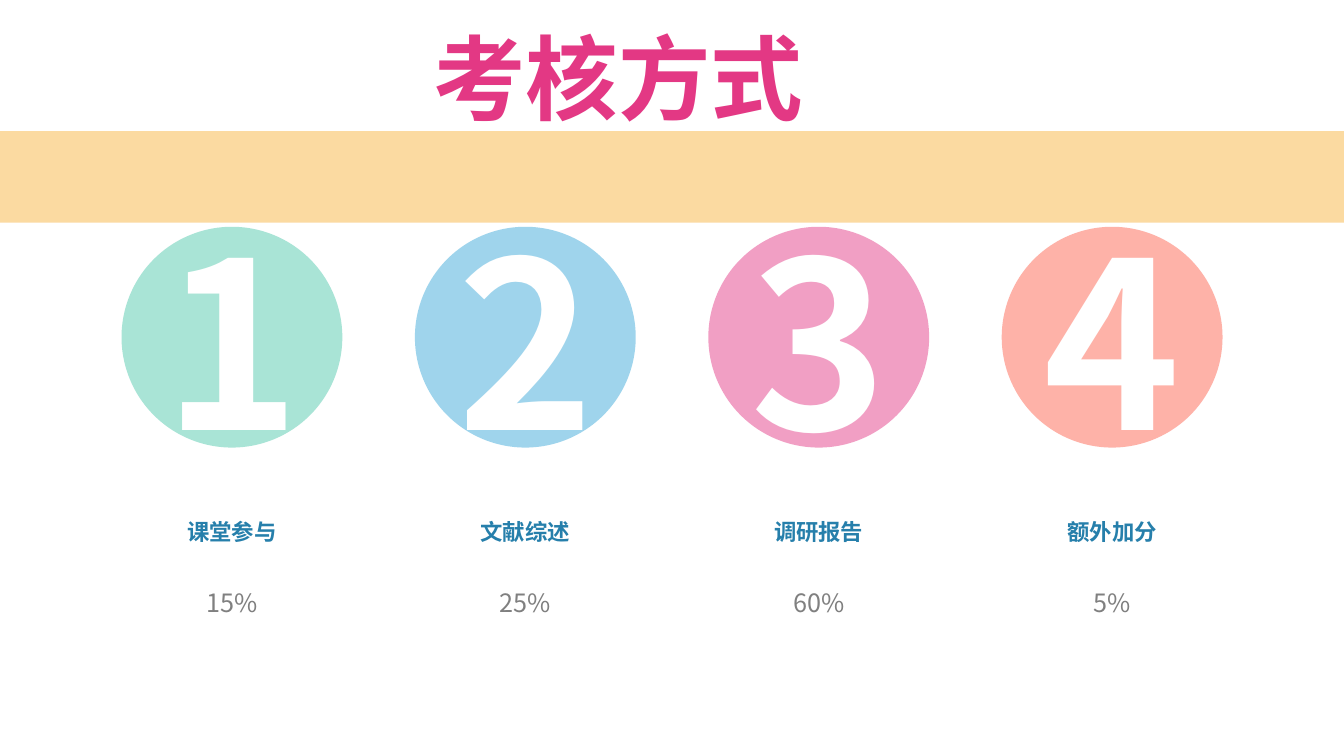
from lxml import etree
from pptx import Presentation
from pptx.dml.color import RGBColor
from pptx.enum.shapes import MSO_SHAPE as Preset
from pptx.enum.text import MSO_ANCHOR as Anchor, MSO_AUTO_SIZE as AutoSize, PP_ALIGN as Align
from pptx.oxml.ns import qn
from pptx.util import Inches, Pt

FONT = "Noto Sans CJK SC"
PINK, BLUE, GREY, WHITE, ORANGE = "E33884", "267FAB", "808080", "FFFFFF", "F69E08"

FIRST_CENTER, STEP = 2.3, 2.91
CIRCLE_SIZE = 2.19
ASSESSMENTS = [
    ("课堂参与", "15%", "4CC7AA"),
    ("文献综述", "25%", "37A7D9"),
    ("调研报告", "60%", PINK),
    ("额外加分", "5%", "FE604A"),
]


def color(hex_string):
    return RGBColor.from_string(hex_string)


class SlideBuilder:
    def __init__(self, page, font):
        self.page = page
        self.font = font

    def set_text(self, shape, text, size, hex_color, bold=False, small_caps=False):
        """Put one centred line of styled text into a shape."""
        para = shape.text_frame.paragraphs[0]
        para.alignment = Align.CENTER
        span = para.add_run()
        span.text = text
        span.font.name = self.font
        span.font.size = Pt(size)
        span.font.bold = bold
        span.font.color.rgb = color(hex_color)
        properties = span.font._element
        properties.find(qn("a:latin")).addnext(
            etree.Element(qn("a:ea"), typeface=self.font))
        if small_caps:
            properties.set("cap", "small")

    def title(self, text, left, top, width, height):
        title = self.page.shapes.title
        title.left, title.top = Inches(left), Inches(top)
        title.width, title.height = Inches(width), Inches(height)
        title.text_frame.auto_size = AutoSize.NONE
        title.text_frame.vertical_anchor = Anchor.MIDDLE
        self.set_text(title, text, 66, PINK, bold=True)

    def shape(self, preset, left, top, width, height, fill, opacity):
        """Add a borderless shape whose opacity is given in percent."""
        shape = self.page.shapes.add_shape(
            preset, Inches(left), Inches(top), Inches(width), Inches(height))
        shape.shadow.inherit = False
        shape.line.fill.background()
        shape.fill.solid()
        shape.fill.fore_color.rgb = color(fill)
        solid = shape._element.spPr.find(qn("a:solidFill"))
        etree.SubElement(solid[0], qn("a:alpha"), val=str(opacity * 1000))
        return shape

    def numbered_circle(self, number, center, fill):
        circle = self.shape(Preset.OVAL, center - CIRCLE_SIZE / 2, 2.25,
                            CIRCLE_SIZE, CIRCLE_SIZE, fill, 48)
        circle.text_frame.vertical_anchor = Anchor.MIDDLE
        self.set_text(circle, str(number), 166, WHITE, bold=True)

    def text_box(self, parent, center, top, width, height, wrap=True):
        box = parent.shapes.add_textbox(
            Inches(center - width / 2), Inches(top), Inches(width), Inches(height))
        box.text_frame.word_wrap = wrap
        box.text_frame.auto_size = AutoSize.SHAPE_TO_FIT_TEXT
        return box

    def caption(self, label, share, center):
        """Group an assessment's label with its share of the grade."""
        group = self.page.shapes.add_group_shape()
        label_box = self.text_box(group, center, 5.04, 1.28, 0.41, wrap=False)
        frame = label_box.text_frame
        frame.margin_left = frame.margin_right = Inches(0.08)
        frame.margin_top = frame.margin_bottom = Inches(0.04)
        self.set_text(label_box, label, 20, BLUE, bold=True, small_caps=True)
        share_box = self.text_box(group, center, 5.78, 2.81, 0.4)
        self.set_text(share_box, share, 18, GREY)


def main():
    deck = Presentation()
    deck.slide_width, deck.slide_height = Inches(13.33), Inches(7.5)
    page = deck.slides.add_slide(deck.slide_layouts[5])
    builder = SlideBuilder(page, FONT)

    builder.title("考核方式", 3.9, 0.15, 4.46, 1.21)
    for index, (label, share, fill) in enumerate(ASSESSMENTS):
        center = FIRST_CENTER + index * STEP
        builder.numbered_circle(index + 1, center, fill)
        builder.caption(label, share, center)
    builder.shape(Preset.RECTANGLE, 0, 1.3, 13.33, 0.91, ORANGE, 38)

    deck.save("out.pptx")


if __name__ == "__main__":
    main()
